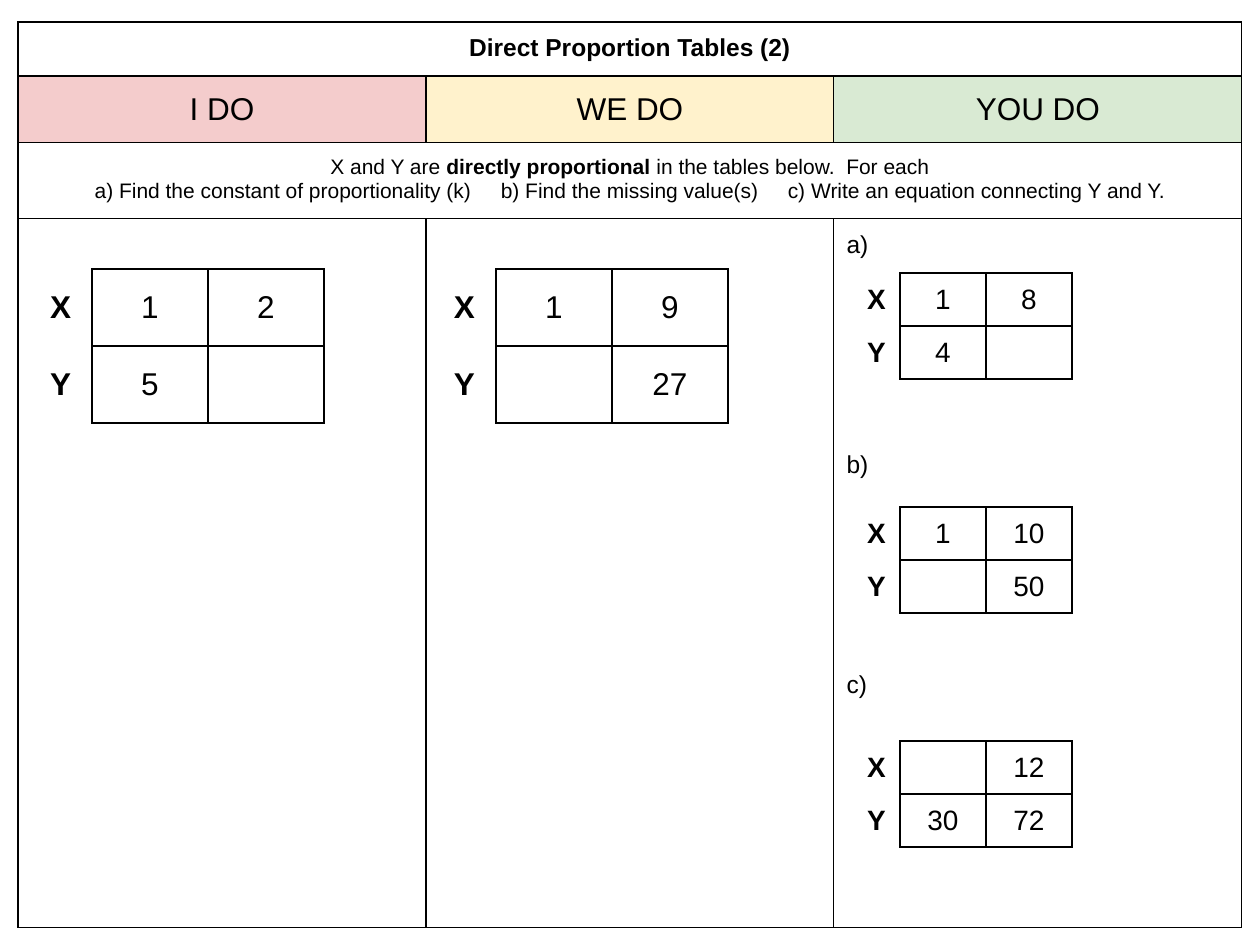
from lxml import etree
from pptx import Presentation
from pptx import util as u
from pptx.dml.color import RGBColor
from pptx.enum import text
from pptx.oxml.ns import qn

PX = 7257  # EMU per px, 126 px to the inch
THEME = {
    "font": "Arial",
    "ink": "000000",
    "columns": {"I DO": "F4CCCC", "WE DO": "FFF2CC", "YOU DO": "D9EAD3"},
    "title": 14,
    "heading": 18,
    "task": 12,
    "label": 14,
}


def add_grid(left, top, widths, heights):
    """Add a plain table whose columns and rows have the given px sizes."""
    table = slide.shapes.add_table(
        len(heights), len(widths),
        left * PX, top * PX, sum(widths) * PX, sum(heights) * PX).table
    table.first_row = table.horz_banding = False
    for column, width in zip(table.columns, widths):
        column.width = width * PX
    for row, height in zip(table.rows, heights):
        row.height = height * PX
    return table


def format_cell(cell, size, line, sides="LRTB", fill=None, bold=False,
                align=text.PP_ALIGN.CENTER, anchor=text.MSO_ANCHOR.MIDDLE):
    properties = cell._tc.get_or_add_tcPr()
    for side in "LRTB":
        border = etree.SubElement(properties, qn("a:ln" + side), w=str(u.Pt(line)))
        if side in sides:
            solid = etree.SubElement(border, qn("a:solidFill"))
            etree.SubElement(solid, qn("a:srgbClr"), val=THEME["ink"])
        else:
            etree.SubElement(border, qn("a:noFill"))
    if fill:
        cell.fill.solid()
        cell.fill.fore_color.rgb = RGBColor.from_string(fill)
    else:
        cell.fill.background()
    cell.vertical_anchor = anchor
    for paragraph in cell.text_frame.paragraphs:
        paragraph.alignment = align
        for run in paragraph.runs:
            run.font.name = THEME["font"]
            run.font.size = u.Pt(size)
            run.font.bold = bold
            run.font.color.rgb = RGBColor.from_string(THEME["ink"])


presentation = Presentation()
presentation.slide_width = u.Inches(10)
presentation.slide_height = u.Inches(7.5)
slide = presentation.slides.add_slide(presentation.slide_layouts[6])

# Lesson frame
frame = add_grid(18, 22, [408] * 3, [54, 67, 76, 709])
for cell in frame.iter_cells():
    cell.margin_left = cell.margin_right = u.Inches(0.1)
    cell.margin_top = cell.margin_bottom = u.Inches(0.1)
for row in (0, 2):
    frame.cell(row, 0).merge(frame.cell(row, 2))

frame.cell(0, 0).text_frame.text = "Direct Proportion Tables (2)"
for column in range(3):
    format_cell(frame.cell(0, column), THEME["title"], 0.75, bold=True,
                anchor=text.MSO_ANCHOR.TOP)

for column, (heading, colour) in enumerate(THEME["columns"].items()):
    frame.cell(1, column).text_frame.text = heading
    format_cell(frame.cell(1, column), THEME["heading"], 0.75, fill=colour)

task = frame.cell(2, 0).text_frame
intro, steps = task.paragraphs[0], task.add_paragraph()
for words in ("X and Y are ", "directly proportional ",
              "in the tables below.  For each"):
    intro.add_run().text = words
for words in ("a) Find the constant of proportionality (k)", " ",
              "b) Find the missing value(s)", " ",
              "c) Write an equation connecting Y and Y."):
    steps.add_run().text = words
for column in range(3):
    format_cell(frame.cell(2, column), THEME["task"], 0.75,
                anchor=text.MSO_ANCHOR.TOP)
intro.runs[1].font.bold = True
for gap in steps.runs[1::2]:
    gap._r.get_or_add_rPr().set("spc", "1330")  # widens the space to 16.6 pt

questions = frame.cell(3, 2).text_frame
questions.text = "a)\nb)\nc)"
for paragraph in questions.paragraphs[1:]:
    paragraph.space_before = u.Pt(110)
for column in range(3):
    format_cell(frame.cell(3, column), THEME["label"], 0.75,
                align=text.PP_ALIGN.LEFT, anchor=text.MSO_ANCHOR.TOP)

# Proportion tables: X values, then Y values
large = {"widths": [63, 116, 116], "heights": [77, 77]}
small = {"widths": [47, 86, 86], "heights": [53, 53]}
exercises = [
    (29, 269, large, 18, ["1", "2"], ["5", ""]),
    (433, 269, large, 18, ["1", "9"], ["", "27"]),
    (853, 273, small, 16, ["1", "8"], ["4", ""]),
    (853, 507, small, 16, ["1", "10"], ["", "50"]),
    (853, 741, small, 16, ["", "12"], ["30", "72"]),
]
for left, top, grid, size, x_values, y_values in exercises:
    table = add_grid(left, top, **grid)
    for row, values in enumerate((["X"] + x_values, ["Y"] + y_values)):
        for column, value in enumerate(values):
            cell = table.cell(row, column)
            cell.text_frame.text = value
            is_label = column == 0
            format_cell(cell, size, 1, sides="R" if is_label else "LRTB",
                        bold=is_label)

presentation.save("out.pptx")
